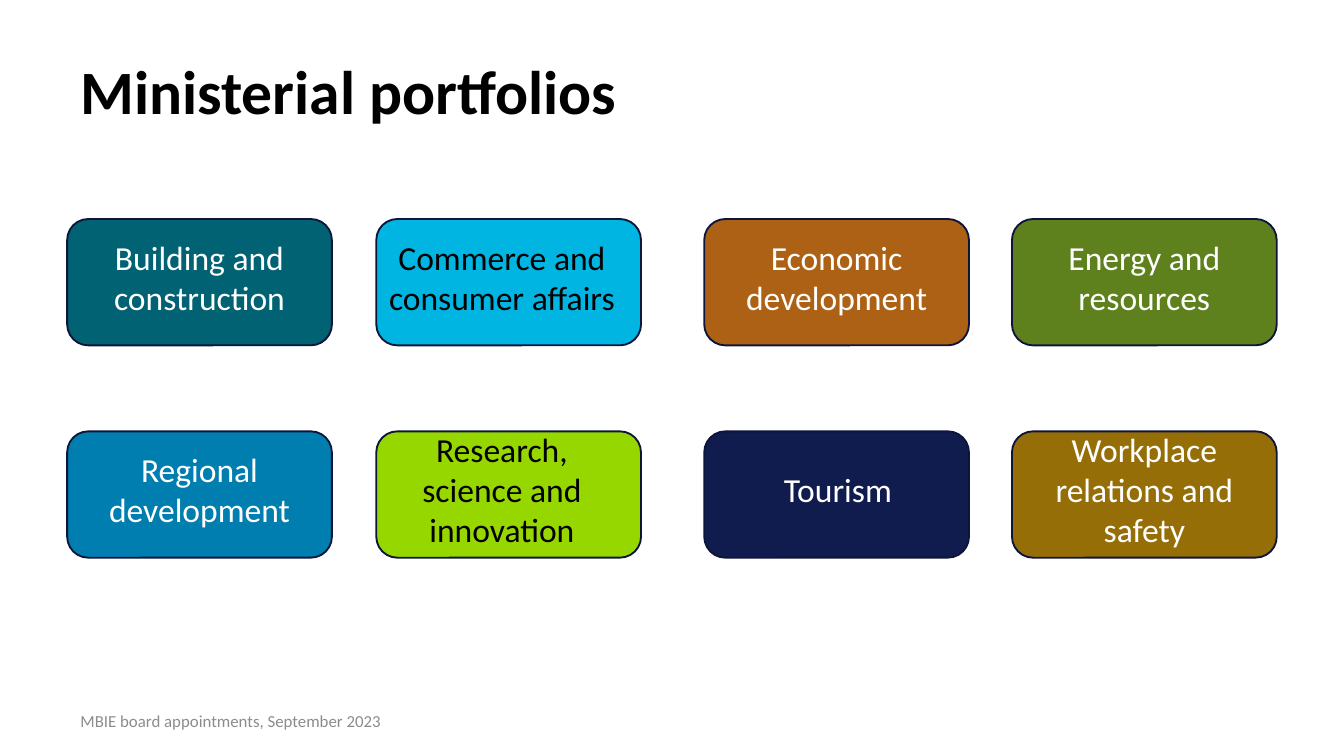
from pptx import Presentation
from pptx.dml.color import RGBColor
from pptx.enum.shapes import MSO_SHAPE
from pptx.enum.text import MSO_ANCHOR, PP_ALIGN
from pptx.util import Inches, Pt

SLIDE_WIDTH = 10
SLIDE_HEIGHT = SLIDE_WIDTH * 9 / 16
MARGIN = 0.05 * SLIDE_WIDTH
CARD_WIDTH, CARD_HEIGHT = 1.97, 0.94
COLUMN_OFFSETS = (0, 2.3, 4.74, 7.03)
ROW_PITCH = 1.58
LABEL_RISE = 0.04
LABEL_HEIGHTS = {1: 0.4, 2: 0.71, 3: 1.01}

PORTFOLIOS = [
    [
        ("Building and construction", 2, "006272", "FFFFFF", 0),
        ("Commerce and consumer affairs", 2, "00B5E2", "000000", -0.05),
        ("Economic development", 2, "AD6114", "FFFFFF", 0),
        ("Energy and resources", 2, "5E811D", "FFFFFF", 0),
    ],
    [
        ("Regional development", 2, "007EAF", "FFFFFF", 0),
        ("Research, science and innovation", 3, "97D700", "000000", -0.05),
        ("Tourism", 1, "111C4E", "FFFFFF", 0.01),
        ("Workplace relations and safety", 3, "966E08", "FFFFFF", 0),
    ],
]


def color(hex_string):
    """Turn a hex string into a colour."""
    return RGBColor.from_string(hex_string)


def add_text(slide, box, text, size, hex_string, bold=False, alignment=PP_ALIGN.LEFT):
    """Place one wrapped, vertically centred paragraph in a box."""
    text_frame = slide.shapes.add_textbox(*map(Inches, box)).text_frame
    text_frame.word_wrap = True
    text_frame.vertical_anchor = MSO_ANCHOR.MIDDLE
    text_frame.text = text
    paragraph = text_frame.paragraphs[0]
    paragraph.alignment = alignment
    font = paragraph.runs[0].font
    font.name = "Calibri"
    font.size = Pt(size)
    font.bold = bold
    font.color.rgb = color(hex_string)
    return paragraph


def add_title(slide, box):
    """Place the slide title."""
    paragraph = add_text(slide, box, "Ministerial portfolios", 33, "000000", bold=True)
    paragraph.line_spacing = 0.9


def add_footer(slide, box):
    """Place the footer line."""
    add_text(slide, box, "MBIE board appointments, September 2023", 9, "8C8C8C")


def add_card(slide, box, fill):
    """Draw one rounded card."""
    card = slide.shapes.add_shape(MSO_SHAPE.ROUNDED_RECTANGLE, *map(Inches, box))
    card.shadow.inherit = False
    card.fill.solid()
    card.fill.fore_color.rgb = color(fill)
    card.line.color.rgb = color("0D1539")
    card.line.width = Pt(1)


def add_label(slide, box, text, lines, text_color, shift):
    """Centre a label of the given line count on its card."""
    left, top, width, height = box
    label_height = LABEL_HEIGHTS[lines]
    label_top = top + (height - label_height) / 2 - LABEL_RISE
    label_box = (left + shift, label_top, width, label_height)
    add_text(slide, label_box, text, 18, text_color, alignment=PP_ALIGN.CENTER)


def add_portfolio_grid(slide, left, top):
    """Lay out the labelled cards in rows and columns."""
    for row, portfolios in enumerate(PORTFOLIOS):
        for offset, portfolio in zip(COLUMN_OFFSETS, portfolios):
            text, lines, fill, text_color, shift = portfolio
            box = (left + offset, top + row * ROW_PITCH, CARD_WIDTH, CARD_HEIGHT)
            add_card(slide, box, fill)
            add_label(slide, box, text, lines, text_color, shift)


def main():
    """Build and save the presentation."""
    presentation = Presentation()
    presentation.slide_width = Inches(SLIDE_WIDTH)
    presentation.slide_height = Inches(SLIDE_HEIGHT)
    slide = presentation.slides.add_slide(presentation.slide_layouts[6])
    add_title(slide, (MARGIN, 0.23, SLIDE_WIDTH - 2 * MARGIN, 0.94))
    add_footer(slide, (MARGIN, 5.21, 7.41, 0.3))
    add_portfolio_grid(slide, MARGIN, 1.63)
    presentation.save("out.pptx")


if __name__ == "__main__":
    main()
